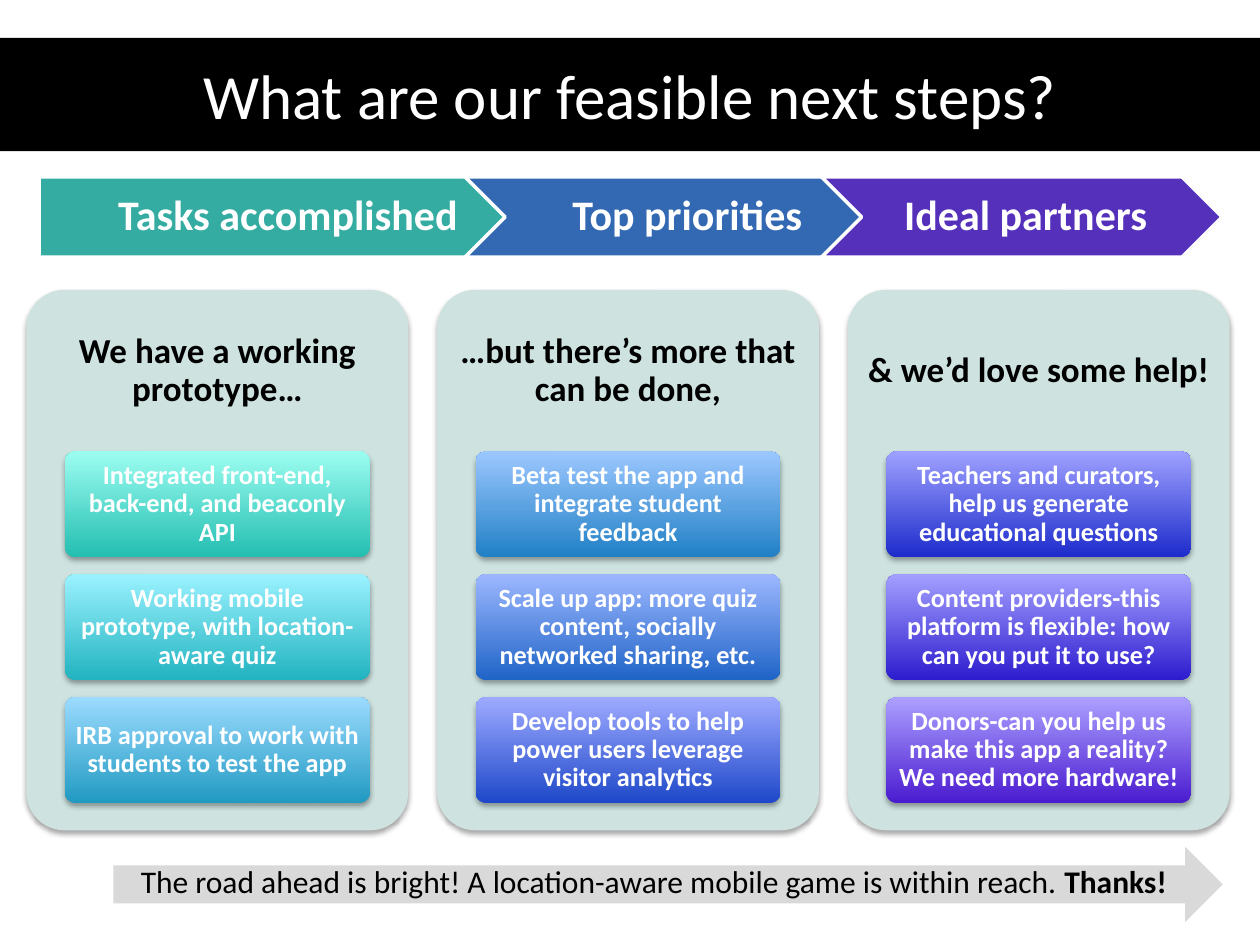
from dataclasses import dataclass

from lxml.etree import SubElement
from pptx import Presentation
from pptx.dml.color import RGBColor
from pptx.enum.shapes import MSO_SHAPE
from pptx.enum.text import MSO_ANCHOR, MSO_AUTO_SIZE, PP_ALIGN
from pptx.oxml.ns import qn
from pptx.util import Pt

COLORS = {
    "black": "000000",
    "white": "FFFFFF",
    "panel": "CEE3E0",
    "road": "D9D9D9",
    "teal": "35ACA2",
    "blue": "3368B3",
    "purple": "5430BB",
}
FONT = "Calibri"


@dataclass
class Stage:
    label: str
    geometry: MSO_SHAPE
    left: float
    width: float
    left_inset: float
    fill: str


@dataclass
class Card:
    text: str
    bottom_color: str
    top_color: str


@dataclass
class Panel:
    heading: str
    cards: list[Card]


STAGES = [
    Stage("Tasks accomplished", MSO_SHAPE.PENTAGON, 22.3, 288.7, 10, "teal"),
    Stage("Top priorities", MSO_SHAPE.CHEVRON, 265.7, 249.8, 7.2, "blue"),
    Stage("Ideal partners", MSO_SHAPE.CHEVRON, 469.4, 229, 7.2, "purple"),
]
PANELS = [
    Panel("We have a working prototype…", [
        Card("Integrated front-end, back-end, and beaconly API", "23BEB1", "9CFDF1"),
        Card("Working mobile prototype, with location-aware quiz", "22B3C0", "9BF2FF"),
        Card("IRB approval to work with students to test the app", "219AC2", "9CDBFF"),
    ]),
    Panel("…but there’s more that can be done,", [
        Card("Beta test the app and integrate student feedback", "2080C5", "9CC7FF"),
        Card("Scale up app: more quiz content, socially networked sharing, etc.",
             "1F64C7", "9DB7FF"),
        Card("Develop tools to help power users leverage visitor analytics",
             "1E48C9", "9EAAFF"),
    ]),
    Panel("& we’d love some help!", [
        Card("Teachers and curators, help us generate educational questions",
             "1D2BCB", "9EA1FF"),
        Card("Content providers-this platform is flexible: how can you put it to use?",
             "2C1CCE", "A39FFF"),
        Card("Donors-can you help us make this app a reality? We need more hardware!",
             "4A1BD0", "ACA0FF"),
    ]),
]
PANEL_LEFT, PANEL_TOP, PANEL_PITCH = 15.1, 165.6, 234.7
PANEL_WIDTH, PANEL_HEIGHT, HEADING_HEIGHT = 218.2, 308.9, 92.7
CARD_TOP, CARD_PITCH, CARD_WIDTH, CARD_HEIGHT = 258, 70.2, 174.2, 60.5


def rgb(name: str) -> RGBColor:
    return RGBColor.from_string(COLORS[name])


def write(shape, text: str, *, size: float, color: str = "white", bold: bool = False,
          align=PP_ALIGN.CENTER, anchor=MSO_ANCHOR.MIDDLE, spacing: float = 0.9,
          insets: tuple = (7.2, 3.6, 7.2, 3.6), bold_ending: str = "") -> None:
    frame = shape.text_frame
    frame.word_wrap = True
    frame.auto_size = MSO_AUTO_SIZE.NONE
    frame.vertical_anchor = anchor
    (frame.margin_left, frame.margin_top,
     frame.margin_right, frame.margin_bottom) = [Pt(inset) for inset in insets]
    paragraph = frame.paragraphs[0]
    paragraph.alignment = align
    paragraph.line_spacing = spacing
    for words, is_bold in ((text, bold), (bold_ending, True)):
        if words:
            run = paragraph.add_run()
            run.text = words
            run.font.name = FONT
            run.font.size = Pt(size)
            run.font.bold = is_bold
            run.font.color.rgb = rgb(color)


def add_box(slide, geometry, left: float, top: float, width: float, height: float,
            fill: str = ""):
    shape = slide.shapes.add_shape(geometry, Pt(left), Pt(top), Pt(width), Pt(height))
    shape.line.fill.background()
    shape.shadow.inherit = False
    if fill:
        shape.fill.solid()
        shape.fill.fore_color.rgb = rgb(fill)
    return shape


def add_raised_box(slide, left: float, top: float, width: float, height: float,
                   fill: str = ""):
    shape = add_box(slide, MSO_SHAPE.ROUNDED_RECTANGLE, left, top, width, height, fill)
    shape.adjustments[0] = 0.1
    effects = shape._element.spPr.find(qn("a:effectLst"))
    shadow = SubElement(effects, qn("a:outerShdw"), blurRad=str(Pt(3.1)),
                        dist=str(Pt(1.8)), dir="5400000", rotWithShape="0")
    color = SubElement(shadow, qn("a:srgbClr"), val=COLORS["black"])
    SubElement(color, qn("a:alpha"), val="35000")
    return shape


def add_text_box(slide, left: float, top: float, width: float, height: float):
    return slide.shapes.add_textbox(Pt(left), Pt(top), Pt(width), Pt(height))


def add_title(slide) -> None:
    title = slide.shapes.title
    title.left, title.top, title.width, title.height = Pt(0), Pt(21.6), Pt(720), Pt(64.8)
    title.fill.solid()
    title.fill.fore_color.rgb = rgb("black")
    write(title, "What are our feasible next steps?", size=36, spacing=1)


def add_stage(slide, stage: Stage) -> None:
    shape = add_box(slide, stage.geometry, stage.left, 101, stage.width, 46, stage.fill)
    shape.line.color.rgb = rgb("white")
    shape.line.width = Pt(2)
    write(shape, stage.label, size=24, bold=True, insets=(stage.left_inset, 5, 2.6, 5))


def add_card(slide, card: Card, left: float, top: float) -> None:
    shape = add_raised_box(slide, left, top, CARD_WIDTH, CARD_HEIGHT)
    shape.fill.gradient()
    shape.fill.gradient_angle = 90
    for stop, color in zip(shape.fill.gradient_stops, (card.bottom_color, card.top_color)):
        stop.color.rgb = RGBColor.from_string(color)
    write(shape, card.text, size=15, bold=True, insets=(2.8, 2, 2.8, 2))


def add_panel(slide, panel: Panel, left: float) -> None:
    add_raised_box(slide, left, PANEL_TOP, PANEL_WIDTH, PANEL_HEIGHT, "panel")
    heading = add_text_box(slide, left, PANEL_TOP, PANEL_WIDTH, HEADING_HEIGHT)
    write(heading, panel.heading, size=20, color="black", bold=True, insets=(6, 6, 6, 6))
    card_left = left + (PANEL_WIDTH - CARD_WIDTH) / 2
    for row, card in enumerate(panel.cards):
        add_card(slide, card, card_left, CARD_TOP + row * CARD_PITCH)


def main() -> None:
    presentation = Presentation()
    presentation.slide_width, presentation.slide_height = Pt(720), Pt(540)
    slide = presentation.slides.add_slide(presentation.slide_layouts[5])
    add_title(slide)
    add_box(slide, MSO_SHAPE.RIGHT_ARROW, 64.8, 483.8, 634, 43.2, "road")
    for stage in STAGES:
        add_stage(slide, stage)
    for column, panel in enumerate(PANELS):
        add_panel(slide, panel, PANEL_LEFT + column * PANEL_PITCH)
    write(add_text_box(slide, 73.4, 488.9, 604, 28.8),
          "The road ahead is bright! A location-aware mobile game is within reach. ",
          size=18, color="black", align=PP_ALIGN.LEFT, anchor=MSO_ANCHOR.TOP,
          spacing=1, bold_ending="Thanks!")
    presentation.save("out.pptx")


if __name__ == "__main__":
    main()
